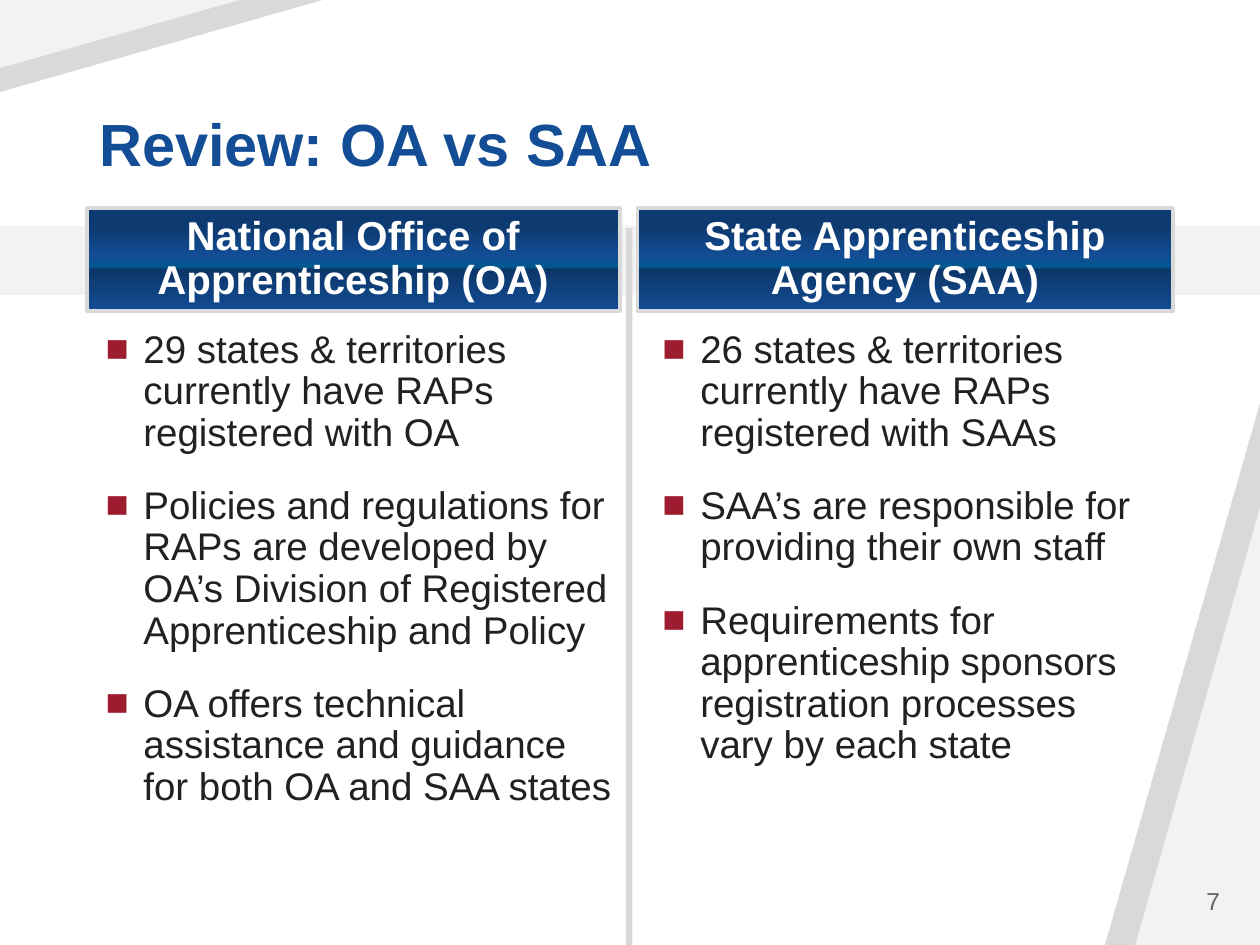
from dataclasses import dataclass, field

import pptx
import pptx.dml.color
import pptx.enum.shapes
import pptx.enum.text
import pptx.oxml
import pptx.oxml.ns
import pptx.util
from pptx.util import Inches

MSO_SHAPE = pptx.enum.shapes.MSO_SHAPE
ALIGN = pptx.enum.text.PP_ALIGN
ANCHOR = pptx.enum.text.MSO_ANCHOR


@dataclass(frozen=True)
class Theme:
    font: str = "Arial"
    blue: str = "124D95"
    ink: str = "242021"
    white: str = "FFFFFF"
    red: str = "9E1C30"
    gray: str = "D9D9D9"
    pale: str = "F2F2F2"
    number: str = "646464"
    title_size: int = 34
    header_size: int = 23
    body_size: int = 22
    number_size: int = 14
    # Header gradient, top to bottom: (percent, colour)
    gradient: tuple = ((19, "0D3A70"), (47, "124D95"), (58, "00588F"),
                       (59, "0D3668"), (100, "124D95"))


THEME = Theme()


@dataclass(frozen=True)
class Box:
    left: float
    top: float
    width: float
    height: float

    def lengths(self) -> list:
        return [Inches(v) for v in (self.left, self.top, self.width, self.height)]


@dataclass(frozen=True)
class Decoration:
    box: Box
    color: str
    kind: int = MSO_SHAPE.RECTANGLE
    rotation: int = 0


@dataclass(frozen=True)
class TextStyle:
    size: int
    color: str
    bold: bool = False
    frame: dict = field(default_factory=dict)
    para: dict = field(default_factory=dict)
    bullet: str = ""


@dataclass(frozen=True)
class Column:
    header: str
    header_box: Box
    body_box: Box
    points: tuple


TITLE = TextStyle(THEME.title_size, THEME.blue, True,
                  {"vertical_anchor": ANCHOR.BOTTOM}, {"line_spacing": 0.9})
HEADER = TextStyle(THEME.header_size, THEME.white, True,
                   {"vertical_anchor": ANCHOR.MIDDLE,
                    "margin_left": Inches(0.05), "margin_right": Inches(0.05),
                    "margin_top": Inches(0.06), "margin_bottom": Inches(0.06)},
                   {"line_spacing": 0.9, "alignment": ALIGN.CENTER})
BODY = TextStyle(THEME.body_size, THEME.ink, para={"line_spacing": 0.9}, bullet="■")
NUMBER = TextStyle(THEME.number_size, THEME.number,
                   frame={"vertical_anchor": ANCHOR.MIDDLE},
                   para={"alignment": ALIGN.RIGHT})

# Triangles have their right angle at the bottom right; the corner ones are turned round
TRIANGLE = MSO_SHAPE.ISOSCELES_TRIANGLE
DECORATIONS = (
    Decoration(Box(8.77, 3.2, 1.23, 4.3), THEME.gray, TRIANGLE),
    Decoration(Box(9.01, 4.03, 0.99, 3.47), THEME.pale, TRIANGLE),
    Decoration(Box(0, 0, 2.56, 0.73), THEME.gray, TRIANGLE, 180),
    Decoration(Box(0, 0, 1.9, 0.54), THEME.pale, TRIANGLE, 180),
    Decoration(Box(0, 1.79, 10, 0.55), THEME.pale),
    Decoration(Box(4.97, 1.81, 0.05, 5.69), THEME.gray),
)

COLUMNS = (
    Column("National Office of Apprenticeship (OA)",
           Box(0.69, 1.65, 4.23, 0.82), Box(0.74, 2.57, 4.28, 4.53),
           ("29 states & territories currently have RAPs registered with OA",
            "Policies and regulations for RAPs are developed by OA’s Division of "
            "Registered Apprenticeship and Policy",
            "OA offers technical assistance and guidance for both OA and SAA states")),
    Column("State Apprenticeship Agency (SAA)",
           Box(5.06, 1.65, 4.25, 0.82), Box(5.16, 2.57, 4.1, 4.2),
           ("26 states & territories currently have RAPs registered with SAAs",
            "SAA’s are responsible for providing their own staff",
            "Requirements for apprenticeship sponsors registration processes "
            "vary by each state")),
)


def rgb(color: str) -> pptx.dml.color.RGBColor:
    return pptx.dml.color.RGBColor.from_string(color)


def set_all(target, values: dict) -> None:
    for name, value in values.items():
        setattr(target, name, value)


def add_bullet(p, char: str) -> None:
    pPr = p._p.get_or_add_pPr()
    pPr.set("marL", str(Inches(0.3)))
    pPr.set("indent", str(Inches(-0.3)))
    ns = pptx.oxml.ns.nsdecls("a")
    for xml in (f'<a:buClr {ns}><a:srgbClr val="{THEME.red}"/></a:buClr>',
                f'<a:buFont {ns} typeface="{THEME.font}"/>',
                f'<a:buChar {ns} char="{char}"/>'):
        pPr.append(pptx.oxml.parse_xml(xml))


def write_text(s, style: TextStyle, *lines: str) -> None:
    tf = s.text_frame
    set_all(tf, {"word_wrap": True, **style.frame})
    for i, line in enumerate(lines):
        p = tf.add_paragraph() if i else tf.paragraphs[0]
        set_all(p, style.para)
        if i:
            p.space_before = pptx.util.Pt(18)
        if style.bullet:
            add_bullet(p, style.bullet)
        r = p.add_run()
        r.text = line
        set_all(r.font, {"name": THEME.font, "size": pptx.util.Pt(style.size),
                         "bold": style.bold})
        r.font.color.rgb = rgb(style.color)


def add_text(slide, box: Box, style: TextStyle, *lines: str) -> None:
    write_text(slide.shapes.add_textbox(*box.lengths()), style, *lines)


def add_decoration(slide, item: Decoration) -> None:
    s = slide.shapes.add_shape(item.kind, *item.box.lengths())
    s.shadow.inherit = False
    s.fill.solid()
    s.fill.fore_color.rgb = rgb(item.color)
    s.line.fill.background()
    s.rotation = item.rotation
    if item.kind == TRIANGLE:
        s.adjustments[0] = 1


def add_header(slide, box: Box, text: str) -> None:
    s = slide.shapes.add_shape(MSO_SHAPE.RECTANGLE, *box.lengths())
    s.shadow.inherit = False
    s.line.color.rgb = rgb(THEME.gray)
    s.line.width = pptx.util.Pt(2)
    stops = "".join(f'<a:gs pos="{pos * 1000}"><a:srgbClr val="{color}"/></a:gs>'
                    for pos, color in THEME.gradient)
    fill = pptx.oxml.parse_xml(
        f'<a:gradFill {pptx.oxml.ns.nsdecls("a")}><a:gsLst>{stops}</a:gsLst>'
        '<a:lin ang="5400000" scaled="0"/></a:gradFill>')
    s._element.spPr.find(pptx.oxml.ns.qn("a:prstGeom")).addnext(fill)
    write_text(s, HEADER, text)


def main() -> None:
    prs = pptx.Presentation()
    prs.slide_width, prs.slide_height = Inches(10), Inches(7.5)
    slide = prs.slides.add_slide(prs.slide_layouts[6])

    # Background shapes
    for item in DECORATIONS:
        add_decoration(slide, item)

    # Title and the two compared columns
    add_text(slide, Box(0.69, 0.4, 8.62, 1.07), TITLE, "Review: OA vs SAA")
    for column in COLUMNS:
        add_header(slide, column.header_box, column.header)
        add_text(slide, column.body_box, BODY, *column.points)

    # Slide number
    add_text(slide, Box(8.96, 6.95, 0.82, 0.4), NUMBER, "7")
    prs.save("out.pptx")


if __name__ == "__main__":
    main()
